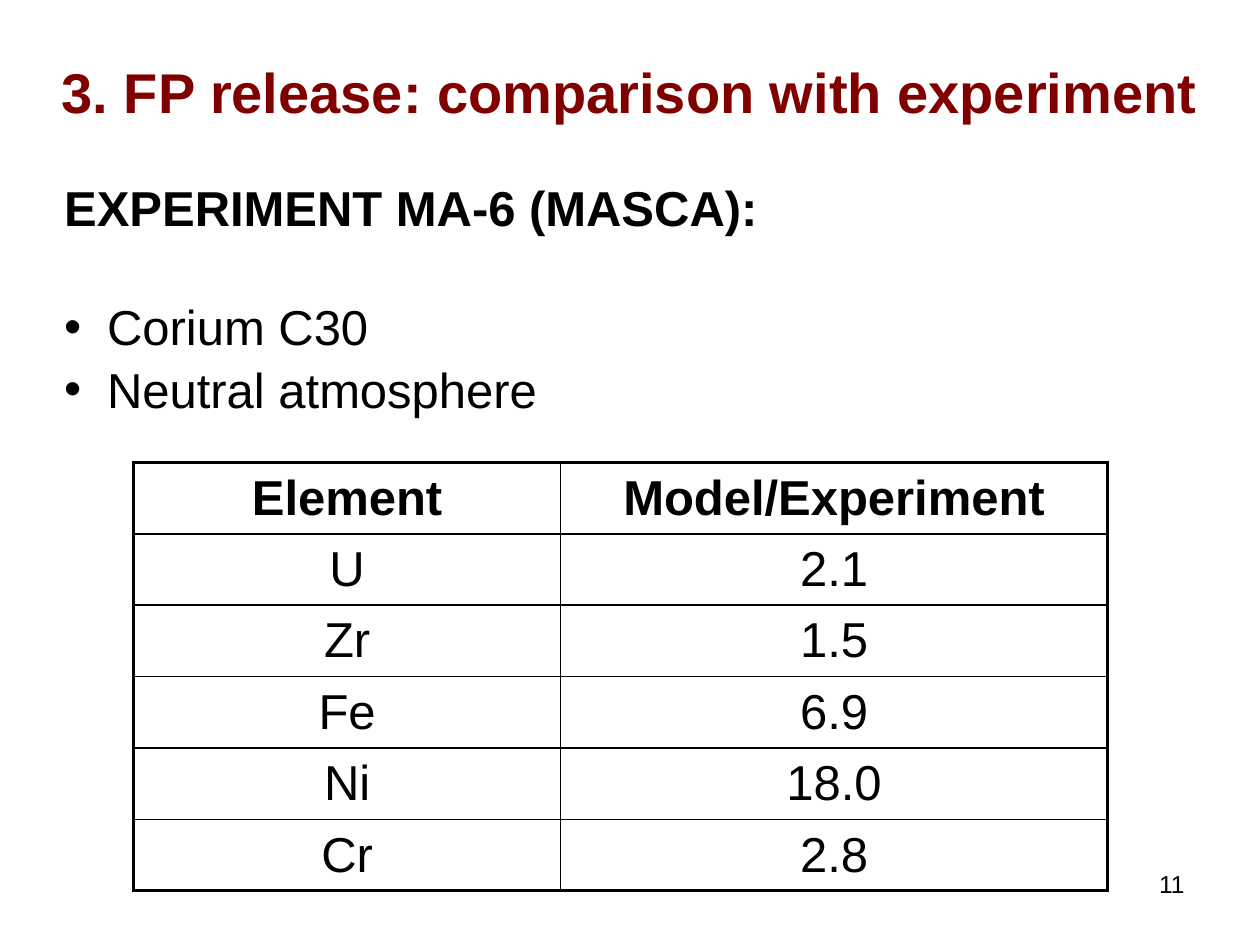
from lxml.etree import SubElement
from pptx import Presentation
from pptx.dml.color import RGBColor
from pptx.enum.text import MSO_ANCHOR, MSO_AUTO_SIZE, PP_ALIGN
from pptx.oxml.ns import qn
from pptx.util import Inches, Pt


def format_text(paragraph, color="000000", alignment=PP_ALIGN.LEFT, **font_values):
    values = {"name": "Arial", "size": Pt(28), "bold": False} | font_values
    for name, value in values.items():
        setattr(paragraph.font, name, value)
    paragraph.font.color.rgb = RGBColor.from_string(color)
    paragraph.alignment = alignment


def place(shape, left, top, width, height, **frame_values):
    shape.left, shape.top = Inches(left), Inches(top)
    shape.width, shape.height = Inches(width), Inches(height)
    values = {"word_wrap": True, "auto_size": MSO_AUTO_SIZE.NONE,
              "vertical_anchor": MSO_ANCHOR.TOP} | frame_values
    for name, value in values.items():
        setattr(shape.text_frame, name, value)


presentation = Presentation()
presentation.slide_width, presentation.slide_height = Inches(10), Inches(7.5)
slide = presentation.slides.add_slide(presentation.slide_layouts[1])

# Title
title = slide.shapes.title
place(title, 0, 0.36, 10, 0.63, margin_top=Inches(0.1), margin_bottom=0)
title.text_frame.text = "3. FP release: comparison with experiment"
format_text(title.text_frame.paragraphs[0], "800000", PP_ALIGN.CENTER,
            size=Pt(32), bold=True)

# Experiment heading and its conditions
body = slide.placeholders[1]
place(body, 0.43, 1.31, 9.16, 2.3, margin_top=Inches(0.1), margin_left=Inches(0.08))
lines = [("EXPERIMENT MA-6 (MASCA):", False, 0),
         ("Corium C30", True, 34.5),
         ("Neutral atmosphere", True, 2)]
body.text_frame.text = "\n".join(text for text, _, _ in lines)
for paragraph, (_, bulleted, space) in zip(body.text_frame.paragraphs, lines):
    format_text(paragraph, bold=not bulleted)
    paragraph.space_before = Pt(space)
    properties = paragraph._p.get_or_add_pPr()
    indent = Inches(0.34) if bulleted else 0
    properties.set("marL", str(indent))
    properties.set("indent", str(-indent))
    if bulleted:
        SubElement(properties, qn("a:buFont"), typeface="Arial")
        SubElement(properties, qn("a:buChar"), char="•")
    else:
        SubElement(properties, qn("a:buNone"))
    # Bullets come before the default run properties
    properties.append(properties.find(qn("a:defRPr")))

# Table of model to experiment ratios
rows = [("Element", "Model/Experiment"), ("U", "2.1"), ("Zr", "1.5"),
        ("Fe", "6.9"), ("Ni", "18.0"), ("Cr", "2.8")]
widths = [3.39, 4.34]
last_row, last_column = len(rows) - 1, len(widths) - 1
table = slide.shapes.add_table(len(rows), len(widths), Inches(1.06), Inches(3.67),
                               Inches(sum(widths)), Inches(3.4)).table
table.first_row = table.horz_banding = False
for column, width in zip(table.columns, widths):
    column.width = Inches(width)

for row_index, row in enumerate(rows):
    for column_index, text in enumerate(row):
        cell = table.cell(row_index, column_index)
        cell.text = text
        cell.vertical_anchor = MSO_ANCHOR.MIDDLE
        format_text(cell.text_frame.paragraphs[0], alignment=PP_ALIGN.CENTER,
                    bold=row_index == 0)
        # Thick outer frame, thin inner lines
        outer_sides = {"a:lnL": column_index == 0, "a:lnR": column_index == last_column,
                       "a:lnT": row_index == 0, "a:lnB": row_index == last_row}
        cell_properties = cell._tc.get_or_add_tcPr()
        for side, outer in outer_sides.items():
            line = SubElement(cell_properties, qn(side), w=str(Pt(2.25 if outer else 1)))
            fill = SubElement(line, qn("a:solidFill"))
            SubElement(fill, qn("a:srgbClr"), val="000000")
        cell.fill.background()

# Slide number
number = slide.shapes.add_textbox(0, 0, 0, 0)
place(number, 7.17, 6.83, 2.33, 0.52, margin_top=Inches(0.07))
number.text_frame.text = "11"
format_text(number.text_frame.paragraphs[0], alignment=PP_ALIGN.RIGHT, size=Pt(14))

presentation.save("out.pptx")
